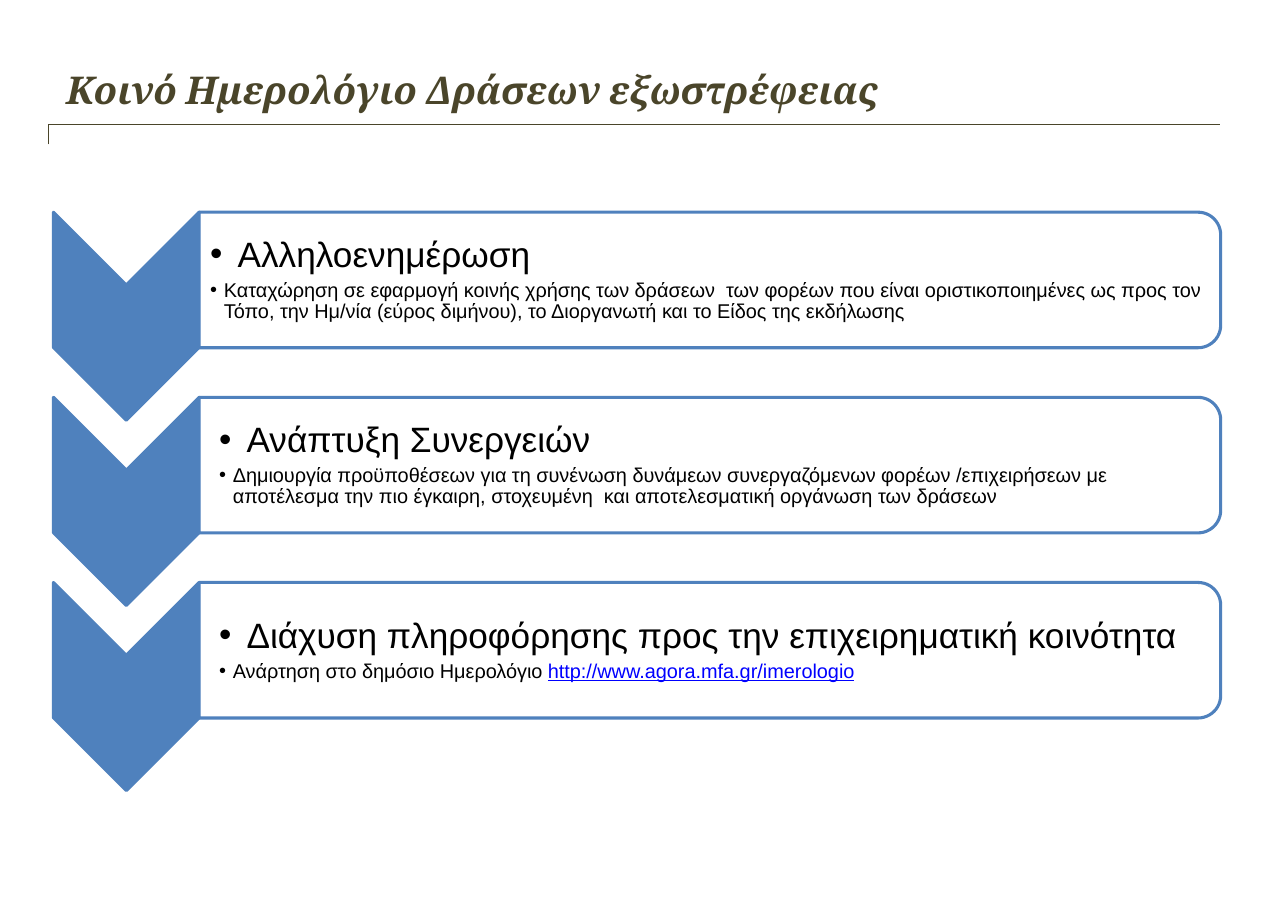
from lxml.etree import SubElement
from pptx import Presentation
from pptx.dml.color import RGBColor
from pptx.enum.shapes import MSO_CONNECTOR, MSO_SHAPE
from pptx.enum.text import MSO_ANCHOR, MSO_AUTO_SIZE, PP_ALIGN
from pptx.oxml import parse_xml
from pptx.oxml.ns import nsdecls, qn
from pptx.util import Pt

OLIVE = RGBColor(0x4A, 0x45, 0x2A)
BLUE = RGBColor(0x4F, 0x81, 0xBD)
WHITE = RGBColor(0xFF, 0xFF, 0xFF)
BLACK = RGBColor(0, 0, 0)
LINK_BLUE = RGBColor(0, 0, 0xFF)

TITLE = "Κοινό Ημερολόγιο Δράσεων εξωστρέφειας"
# Heading, detail, link text, left inset of the text
STEPS = [
    ("Αλληλοενημέρωση",
     "Καταχώρηση σε εφαρμογή κοινής χρήσης των δράσεων  των φορέων που είναι "
     "οριστικοποιημένες ως προς τον Τόπο, την Ημ/νία (εύρος διμήνου), "
     "το Διοργανωτή και το Είδος της εκδήλωσης", "", 7.2),
    ("Ανάπτυξη Συνεργειών",
     "Δημιουργία προϋποθέσεων για τη συνένωση δυνάμεων συνεργαζόμενων φορέων "
     "/επιχειρήσεων με αποτέλεσμα την πιο έγκαιρη, στοχευμένη  και "
     "αποτελεσματική οργάνωση των δράσεων", "", 13),
    ("Διάχυση πληροφόρησης προς την επιχειρηματική κοινότητα",
     "Ανάρτηση στο δημόσιο Ημερολόγιο ",
     "http://www.agora.mfa.gr/imerologio", 13),
]
STEP_PITCH = 121
CHEVRON_WIDTH, CHEVRON_HEIGHT = 95.2, 136
FRAME_HEIGHT = 88.6


def place(shape, left, top, width, height):
    shape.left, shape.top = Pt(left), Pt(top)
    shape.width, shape.height = Pt(width), Pt(height)


def set_insets(text_frame, left, top, right, bottom):
    text_frame.margin_left, text_frame.margin_right = Pt(left), Pt(right)
    text_frame.margin_top, text_frame.margin_bottom = Pt(top), Pt(bottom)
    text_frame.word_wrap = True
    text_frame.auto_size = MSO_AUTO_SIZE.NONE


def format_run(run, font_name, size, color, bold=False):
    font = run.font
    font.name, font.size, font.bold = font_name, Pt(size), bold
    font.color.rgb = color


def add_title(slide, left, top, width, height):
    """Fill the title placeholder and draw the bent rule beneath it."""
    title = slide.shapes.title
    place(title, left, top, width, height)
    text_frame = title.text_frame
    text_frame.text = TITLE
    set_insets(text_frame, 7.9, 4.3, 7.9, 4.3)
    text_frame.vertical_anchor = MSO_ANCHOR.TOP
    paragraph = text_frame.paragraphs[0]
    paragraph.alignment = PP_ALIGN.LEFT
    run = paragraph.runs[0]
    format_run(run, "Cambria", 25, OLIVE, bold=True)
    run.font.italic = True
    shadow = parse_xml(
        f'<a:effectLst {nsdecls("a")}><a:outerShdw blurRad="38100" dist="38100" '
        'dir="2700000" algn="tl"><a:srgbClr val="000000"><a:alpha val="43000"/>'
        '</a:srgbClr></a:outerShdw></a:effectLst>')
    run.font.fill._xPr.find(qn("a:solidFill")).addnext(shadow)

    rule_left, rule_top = left - 3.6, top + 42.5
    rule = slide.shapes.add_connector(
        MSO_CONNECTOR.ELBOW, Pt(rule_left), Pt(rule_top + 13),
        Pt(rule_left + 765.4), Pt(rule_top))
    rule.line.color.rgb, rule.line.width = OLIVE, Pt(1)
    properties = rule._element.spPr
    SubElement(properties, qn("a:effectLst"))
    adjustments = properties.find(qn("a:prstGeom")).get_or_add_avLst()
    SubElement(adjustments, qn("a:gd"), name="adj1", fmla="val 0")


def add_turned_shape(slide, preset, fill, left, top, width, height):
    """Add a shape turned by 90 degrees that covers the given box."""
    shift = (width - height) / 2
    shape = slide.shapes.add_shape(
        preset, Pt(left + shift), Pt(top - shift), Pt(height), Pt(width))
    shape.rotation = 90
    shape.shadow.inherit = False
    shape.fill.solid()
    shape.fill.fore_color.rgb = fill
    shape.line.color.rgb, shape.line.width = BLUE, Pt(2)
    return shape


def format_bullet(paragraph, indent, size):
    paragraph.alignment = PP_ALIGN.LEFT
    paragraph.line_spacing = 0.9
    paragraph.space_before = Pt(0)
    paragraph.space_after = Pt(size * 0.15)
    properties = paragraph._p.get_or_add_pPr()
    properties.set("marL", str(Pt(indent)))
    properties.set("indent", str(-Pt(indent)))
    SubElement(properties, qn("a:buFont"), typeface="Arial")
    SubElement(properties, qn("a:buChar"), char="•")
    for run in paragraph.runs:
        format_run(run, "Arial", size, BLACK)


def add_step(slide, body, step, left, top, width):
    heading, detail, link, inset = step
    add_turned_shape(slide, MSO_SHAPE.CHEVRON, BLUE,
                     left, top, CHEVRON_WIDTH, CHEVRON_HEIGHT)
    frame_left, frame_width = left + CHEVRON_WIDTH, width - CHEVRON_WIDTH
    frame = add_turned_shape(slide, MSO_SHAPE.ROUND_2_SAME_RECTANGLE, WHITE,
                             frame_left, top, frame_width, FRAME_HEIGHT)
    color = frame.fill._xPr.find(qn("a:solidFill"))[0]
    SubElement(color, qn("a:alpha"), val="90000")

    frame._element.addnext(body._element)
    place(body, frame_left, top + 4.3, frame_width - 4.3, FRAME_HEIGHT - 8.6)
    text_frame = body.text_frame
    set_insets(text_frame, inset, 1, 1, 1)
    text_frame.vertical_anchor = MSO_ANCHOR.MIDDLE
    text_frame.text = heading
    format_bullet(text_frame.paragraphs[0], 18, 23)
    paragraph = text_frame.add_paragraph()
    paragraph.text = detail
    format_bullet(paragraph, 9, 13)
    if link:
        run = paragraph.add_run()
        run.text = link
        format_run(run, "Arial", 13, LINK_BLUE)
        run.font.underline = True


def main():
    presentation = Presentation()
    presentation.slide_width, presentation.slide_height = Pt(841.7), Pt(595.4)
    comparison_layout = presentation.slide_layouts[4]
    slide = presentation.slides.add_slide(comparison_layout)
    _, *bodies, spare = slide.placeholders
    spare._element.getparent().remove(spare._element)

    add_title(slide, 35.3, 38.9, 802, 73.4)
    for index, (body, step) in enumerate(zip(bodies, STEPS)):
        add_step(slide, body, step, 34.9, 138.7 + index * STEP_PITCH, 762.8)
    presentation.save("out.pptx")


if __name__ == "__main__":
    main()
